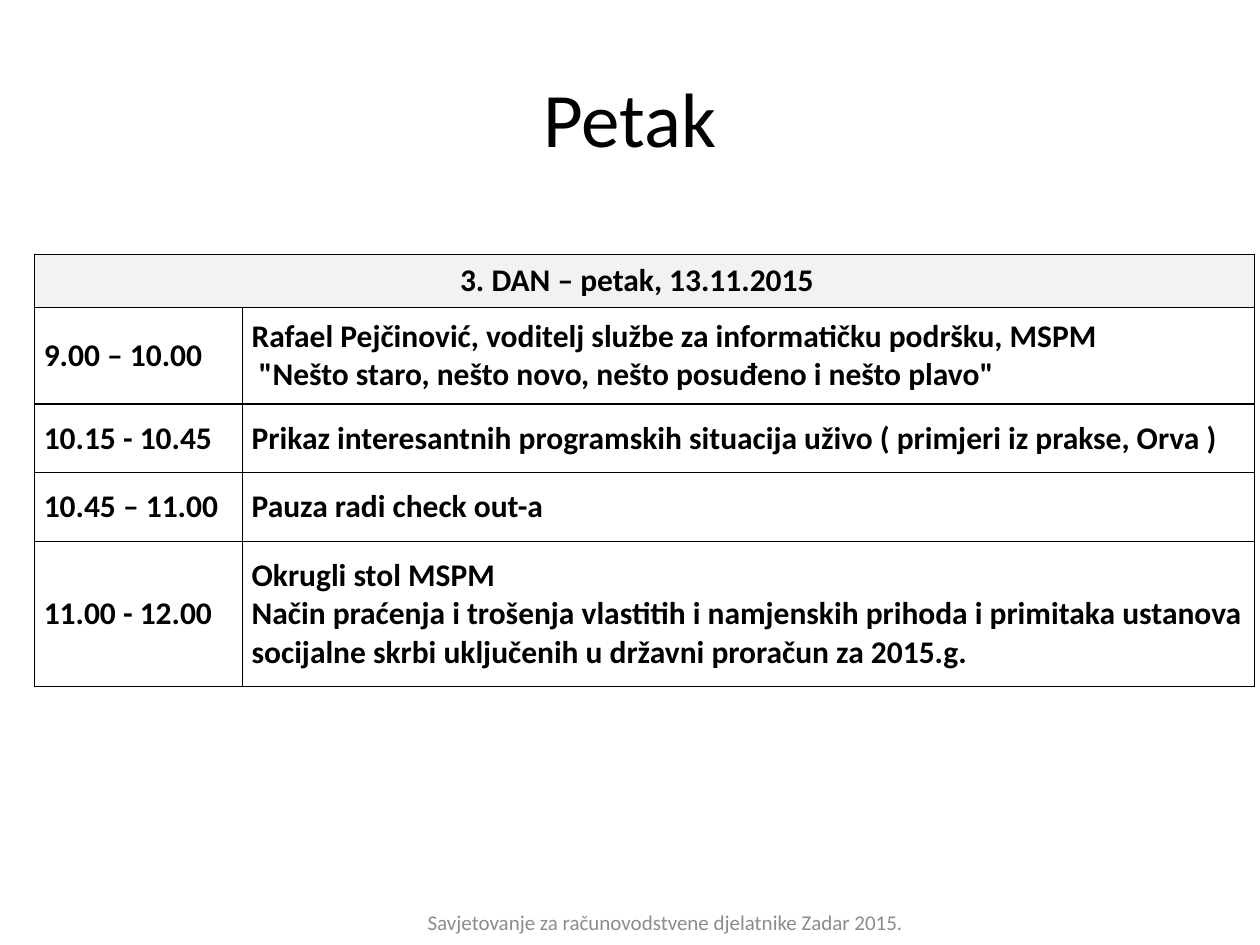
from pptx import Presentation
from pptx.dml.color import RGBColor
from pptx.enum.text import MSO_ANCHOR as Anchor, PP_ALIGN as Align
from pptx.oxml import parse_xml
from pptx.oxml.ns import nsdecls
from pptx.util import Pt

TITLE = "Petak"
FOOTER = "Savjetovanje za računovodstvene djelatnike Zadar 2015."
HEADING = "3. DAN – petak, 13.11.2015"
SCHEDULE = [
    ("9.00 – 10.00",
     "Rafael Pejčinović, voditelj službe za informatičku podršku, MSPM\n"
     " \"Nešto staro, nešto novo, nešto posuđeno i nešto plavo\""),
    ("10.15 - 10.45",
     "Prikaz interesantnih programskih situacija uživo ( primjeri iz prakse, Orva )"),
    ("10.45 – 11.00", "Pauza radi check out-a"),
    ("11.00 - 12.00",
     "Okrugli stol MSPM\n"
     "Način praćenja i trošenja vlastitih i namjenskih prihoda i primitaka "
     "ustanova socijalne skrbi uključenih u državni proračun za 2015.g."),
]
COLORS = {"text": "000000", "footer": "8C8C8C", "heading": "F2F2F2", "border": "000000"}
FONT = "Calibri"
COLUMN_WIDTHS = [118.8, 578.4]
ROW_HEIGHTS = [30.4, 55.3, 39, 39.5, 82.8]
TABLE_LEFT, TABLE_TOP = 19.8, 145.3


def format_text(frame, size, color, align, bold=False):
    for para in frame.paragraphs:
        para.alignment = align
        for span in para.runs:
            span.font.name = FONT
            span.font.size = Pt(size)
            span.font.bold = bold
            span.font.color.rgb = RGBColor.from_string(COLORS[color])


def add_label(page, text, left, top, width, height, size, color):
    box = page.shapes.add_textbox(Pt(left), Pt(top), Pt(width), Pt(height))
    frame = box.text_frame
    frame.word_wrap = True
    frame.vertical_anchor = Anchor.MIDDLE
    frame.text = text
    format_text(frame, size, color, Align.CENTER)


def set_borders(cell):
    properties = cell._tc.get_or_add_tcPr()
    for index, side in enumerate(("lnL", "lnR", "lnT", "lnB")):
        properties.insert(index, parse_xml(
            f'<a:{side} {nsdecls("a")} w="{Pt(1)}"><a:solidFill>'
            f'<a:srgbClr val="{COLORS["border"]}"/></a:solidFill></a:{side}>'))


def fill_cell(cell, text, align=Align.LEFT):
    cell.text = text
    cell.vertical_anchor = Anchor.MIDDLE
    cell.margin_left = cell.margin_right = Pt(5.2)
    cell.margin_top = cell.margin_bottom = Pt(0)
    format_text(cell.text_frame, 18, "text", align, bold=True)


deck = Presentation()
deck.slide_width, deck.slide_height = Pt(720), Pt(540)
page = deck.slides.add_slide(deck.slide_layouts[6])

# Footer and title
add_label(page, FOOTER, 218.9, 512.6, 322.6, 28.8, 12, "footer")
add_label(page, TITLE, 36, 21.6, 648, 90, 44, "text")

# Schedule table
table = page.shapes.add_table(
    len(ROW_HEIGHTS), len(COLUMN_WIDTHS), Pt(TABLE_LEFT), Pt(TABLE_TOP),
    Pt(sum(COLUMN_WIDTHS)), Pt(sum(ROW_HEIGHTS))).table
table.first_row = table.horz_banding = False
for column, width in zip(table.columns, COLUMN_WIDTHS):
    column.width = Pt(width)
for row, height in zip(table.rows, ROW_HEIGHTS):
    row.height = Pt(height)
for cell in table.iter_cells():
    cell.fill.background()
    set_borders(cell)

# Heading row across both columns, centred slightly left of the middle
heading = table.cell(0, 0)
heading.merge(table.cell(0, 1))
fill_cell(heading, HEADING, Align.CENTER)
heading.margin_right = Pt(14)
heading.fill.solid()
heading.fill.fore_color.rgb = RGBColor.from_string(COLORS["heading"])

# One row per session
for row_index, session in enumerate(SCHEDULE, start=1):
    for column_index, text in enumerate(session):
        fill_cell(table.cell(row_index, column_index), text)

deck.save("out.pptx")
